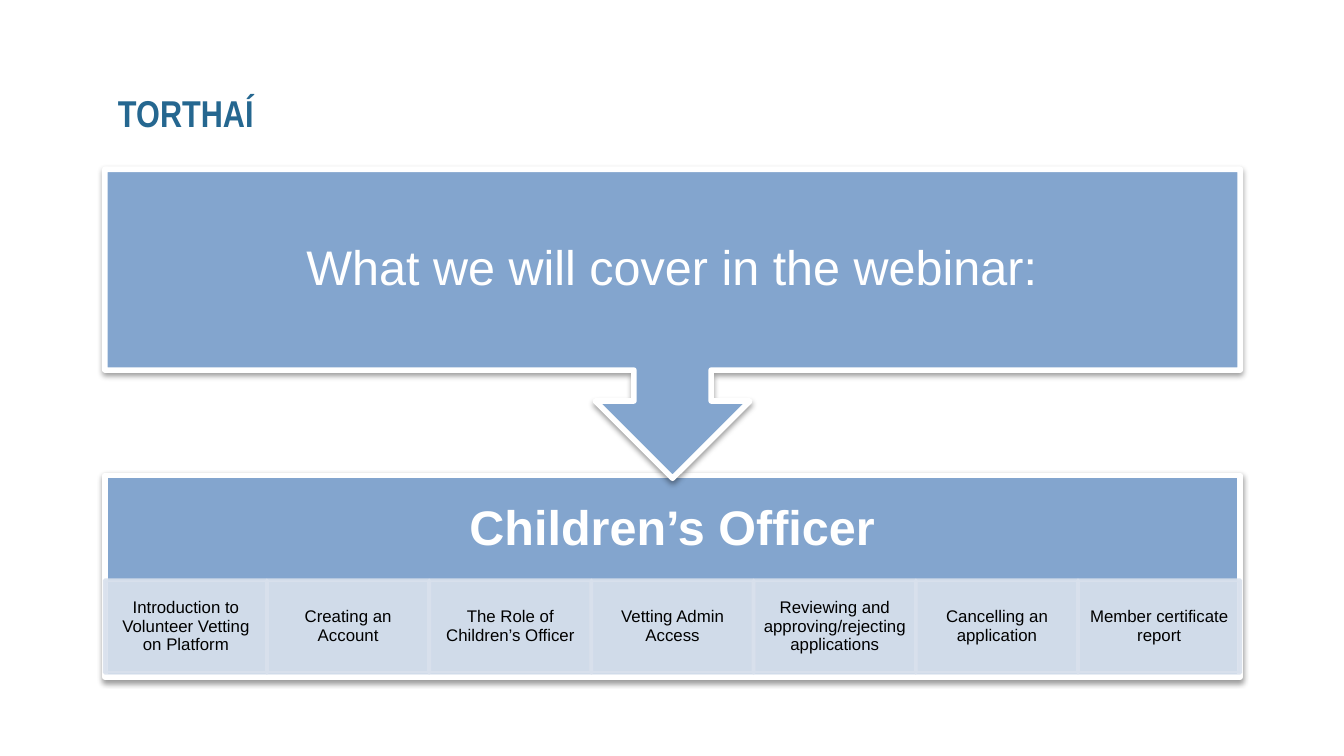
from lxml.etree import SubElement
from pptx import Presentation
from pptx.dml.color import RGBColor
from pptx.enum.shapes import MSO_SHAPE
from pptx.enum.text import MSO_ANCHOR, PP_ALIGN
from pptx.oxml.ns import qn
from pptx.util import Cm, Pt

COLORS = {
    "title": "256790",
    "panel": "83A5CE",
    "topic": "D9E1ED",
    "white": "FFFFFF",
    "black": "000000",
}
LEFT, WIDTH = 1.98, 21.46
TOPICS = [
    "Introduction to Volunteer Vetting on Platform",
    "Creating an Account",
    "The Role of Children’s Officer",
    "Vetting Admin Access",
    "Reviewing and approving/rejecting applications",
    "Cancelling an application",
    "Member certificate report",
]


def color(name):
    return RGBColor.from_string(COLORS[name])


def set_alpha(color_element, percent):
    SubElement(color_element, qn("a:alpha"), val=str(percent * 1000))


def add_soft_shadow(shape):
    """Cast a faint black shadow straight down."""
    shape.shadow.inherit = False
    effects = shape._element.spPr.find(qn("a:effectLst"))
    shadow = SubElement(effects, qn("a:outerShdw"), blurRad=str(Pt(3.1)),
                        dist=str(Pt(1.6)), dir="5400000", rotWithShape="0")
    black = SubElement(shadow, qn("a:srgbClr"), val=COLORS["black"])
    set_alpha(black, 38)


def write_text(shape, text, size, ink, font="Arial", bold=False,
               align=PP_ALIGN.CENTER, margins=(0.5, 0.5)):
    frame = shape.text_frame
    frame.text = text
    frame.word_wrap = True
    frame.vertical_anchor = MSO_ANCHOR.MIDDLE
    frame.margin_left = frame.margin_right = Cm(margins[0])
    frame.margin_top = frame.margin_bottom = Cm(margins[1])
    para = frame.paragraphs[0]
    para.alignment = align
    para.line_spacing = 0.9
    span = para.runs[0]
    span.font.name = font
    span.font.size = Pt(size)
    span.font.bold = bold
    span.font.color.rgb = color(ink)


def add_label(page, top, height, text, size, ink, **style):
    box = page.shapes.add_textbox(Cm(LEFT), Cm(top), Cm(WIDTH), Cm(height))
    write_text(box, text, size, ink, **style)


def add_box(page, kind, left, top, width, height, fill, line, line_width):
    box = page.shapes.add_shape(kind, Cm(left), Cm(top), Cm(width), Cm(height))
    box.shadow.inherit = False
    box.fill.solid()
    box.fill.fore_color.rgb = color(fill)
    box.line.color.rgb = color(line)
    box.line.width = Pt(line_width)
    return box


def add_panel(page, kind, top, height):
    panel = add_box(page, kind, LEFT, top, WIDTH, height, "panel", "white", 3)
    add_soft_shadow(panel)
    return panel


def add_topics(page, top, height):
    width = WIDTH / len(TOPICS)
    for index, topic in enumerate(TOPICS):
        box = add_box(page, MSO_SHAPE.RECTANGLE, LEFT + index * width, top,
                      width, height, "topic", "topic", 2)
        for tint in box._element.spPr.iter(qn("a:srgbClr")):
            set_alpha(tint, 90)
        write_text(box, topic, 9, "black", margins=(0.18, 0.03))


def main():
    deck = Presentation()
    deck.slide_width, deck.slide_height = Cm(25.4), Cm(14.29)
    page = deck.slides.add_slide(deck.slide_layouts[6])

    # Title
    add_label(page, 1.5, 1.35, "TORTHAÍ", 20, "title", font="Arial Narrow",
              bold=True, align=PP_ALIGN.LEFT, margins=(0.25, 0.25))

    # Lower panel with its row of topics
    add_panel(page, MSO_SHAPE.RECTANGLE, 8.99, 3.81)
    add_label(page, 8.99, 2.06, "Children’s Officer", 26, "white", bold=True)
    add_topics(page, 10.97, 1.75)

    # Upper callout, turned to point down
    callout = add_panel(page, MSO_SHAPE.UP_ARROW_CALLOUT, 3.2, 5.84)
    callout.rotation = 180
    add_label(page, 3.2, 3.81, "What we will cover in the webinar:", 26, "white")

    deck.save("out.pptx")


if __name__ == "__main__":
    main()
